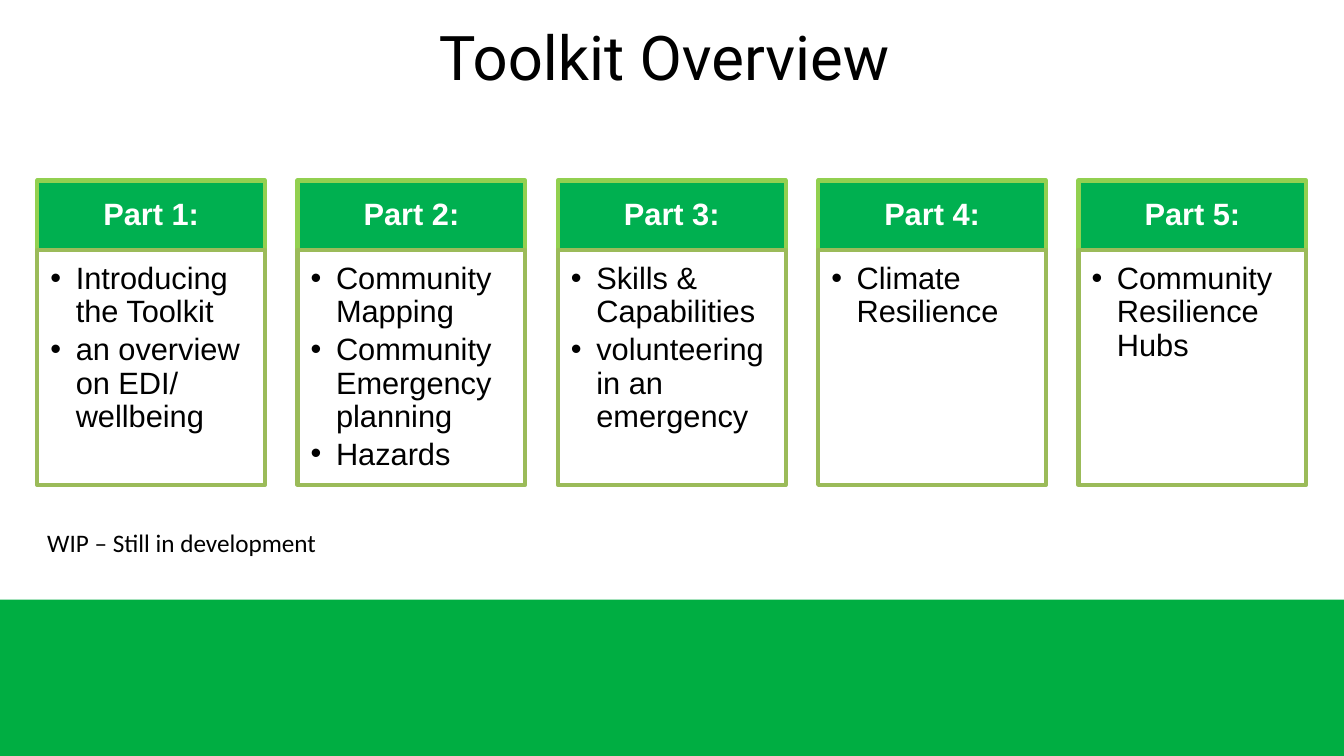
from lxml.etree import SubElement
from pptx import Presentation
from pptx.dml.color import RGBColor
from pptx.enum.shapes import MSO_SHAPE as Preset
from pptx.enum.text import MSO_ANCHOR as Anchor, MSO_AUTO_SIZE as AutoSize, PP_ALIGN as Align
from pptx.oxml.ns import qn
from pptx.util import Cm, Pt

SLIDE_WIDTH, SLIDE_HEIGHT = 33.87, 19.05
BAND_TOP = 15.11
CARD_LEFT, CARD_PITCH, CARD_WIDTH = 0.94, 6.56, 5.74
HEAD_TOP, HEAD_HEIGHT, BODY_HEIGHT = 4.55, 1.75, 5.92
BULLET_INDENT = 0.64

PARTS = [
    ("Part 1:", ["Introducing the Toolkit", "an overview on EDI/ wellbeing"]),
    ("Part 2:", ["Community Mapping", "Community Emergency planning", "Hazards"]),
    ("Part 3:", ["Skills & Capabilities", "volunteering in an emergency"]),
    ("Part 4:", ["Climate Resilience"]),
    ("Part 5:", ["Community Resilience Hubs"]),
]


def color(value):
    return RGBColor.from_string(value)


def add_bullet(para):
    properties = para._p.get_or_add_pPr()
    properties.set("marL", str(Cm(BULLET_INDENT)))
    properties.set("indent", str(-Cm(BULLET_INDENT)))
    SubElement(properties, qn("a:buFont")).set("typeface", "Arial")
    SubElement(properties, qn("a:buChar")).set("char", "•")


def write(frame, lines, size=22, font="Arial", fill="000000", bold=False,
          align=Align.LEFT, anchor=Anchor.TOP, insets=(0.25, 0.13, 0.25, 0.13),
          spacing=1.0, after=0, bullets=False):
    frame.word_wrap = True
    frame.auto_size = AutoSize.NONE
    frame.vertical_anchor = anchor
    (frame.margin_left, frame.margin_top,
     frame.margin_right, frame.margin_bottom) = map(Cm, insets)
    for index, line in enumerate(lines):
        para = frame.add_paragraph() if index else frame.paragraphs[0]
        para.alignment = align
        para.line_spacing = spacing
        para.space_before = Pt(0)
        para.space_after = Pt(after)
        if bullets:
            para.level = 1
            add_bullet(para)
        span = para.add_run()
        span.text = line
        span.font.size = Pt(size)
        span.font.name = font
        span.font.bold = bold
        span.font.color.rgb = color(fill)


def add_rectangle(page, left, top, width, height, fill, line=None):
    box = page.shapes.add_shape(Preset.RECTANGLE, Cm(left), Cm(top), Cm(width), Cm(height))
    box.shadow.inherit = False
    box.fill.solid()
    box.fill.fore_color.rgb = color(fill)
    if line:
        box.line.color.rgb = color(line)
        box.line.width = Pt(3)
    else:
        box.line.fill.background()
    return box


def add_title(page, text):
    title = page.shapes.title
    title.left, title.top = Cm(0), Cm(0.36)
    title.width, title.height = Cm(SLIDE_WIDTH), Cm(2.11)
    write(title.text_frame, [text], size=44, font="Roboto",
          align=Align.CENTER, anchor=Anchor.MIDDLE)


def add_card(page, left, heading, topics):
    head = add_rectangle(page, left, HEAD_TOP, CARD_WIDTH, HEAD_HEIGHT, "00B050", "92D050")
    write(head.text_frame, [heading], fill="FFFFFF", bold=True, align=Align.CENTER,
          anchor=Anchor.MIDDLE, insets=(0.43, 0.25, 0.43, 0.25), spacing=0.9)
    body = add_rectangle(page, left, HEAD_TOP + HEAD_HEIGHT, CARD_WIDTH, BODY_HEIGHT,
                         "FFFFFF", "9BBB59")
    write(body.text_frame, topics, insets=(0.33, 0.33, 0.43, 0.48),
          spacing=0.9, after=3.3, bullets=True)


def add_note(page, text):
    box = page.shapes.add_textbox(Cm(CARD_LEFT), Cm(13.16), Cm(7.77), Cm(1.02))
    write(box.text_frame, [text], size=18, font="Calibri")


def main():
    deck = Presentation()
    deck.slide_width, deck.slide_height = Cm(SLIDE_WIDTH), Cm(SLIDE_HEIGHT)
    page = deck.slides.add_slide(deck.slide_layouts[5])
    add_rectangle(page, 0, BAND_TOP, SLIDE_WIDTH, SLIDE_HEIGHT - BAND_TOP, "00AE42")
    add_title(page, "Toolkit Overview ")
    for index, (heading, topics) in enumerate(PARTS):
        add_card(page, CARD_LEFT + index * CARD_PITCH, heading, topics)
    add_note(page, "WIP – Still in development")
    deck.save("out.pptx")


if __name__ == "__main__":
    main()
